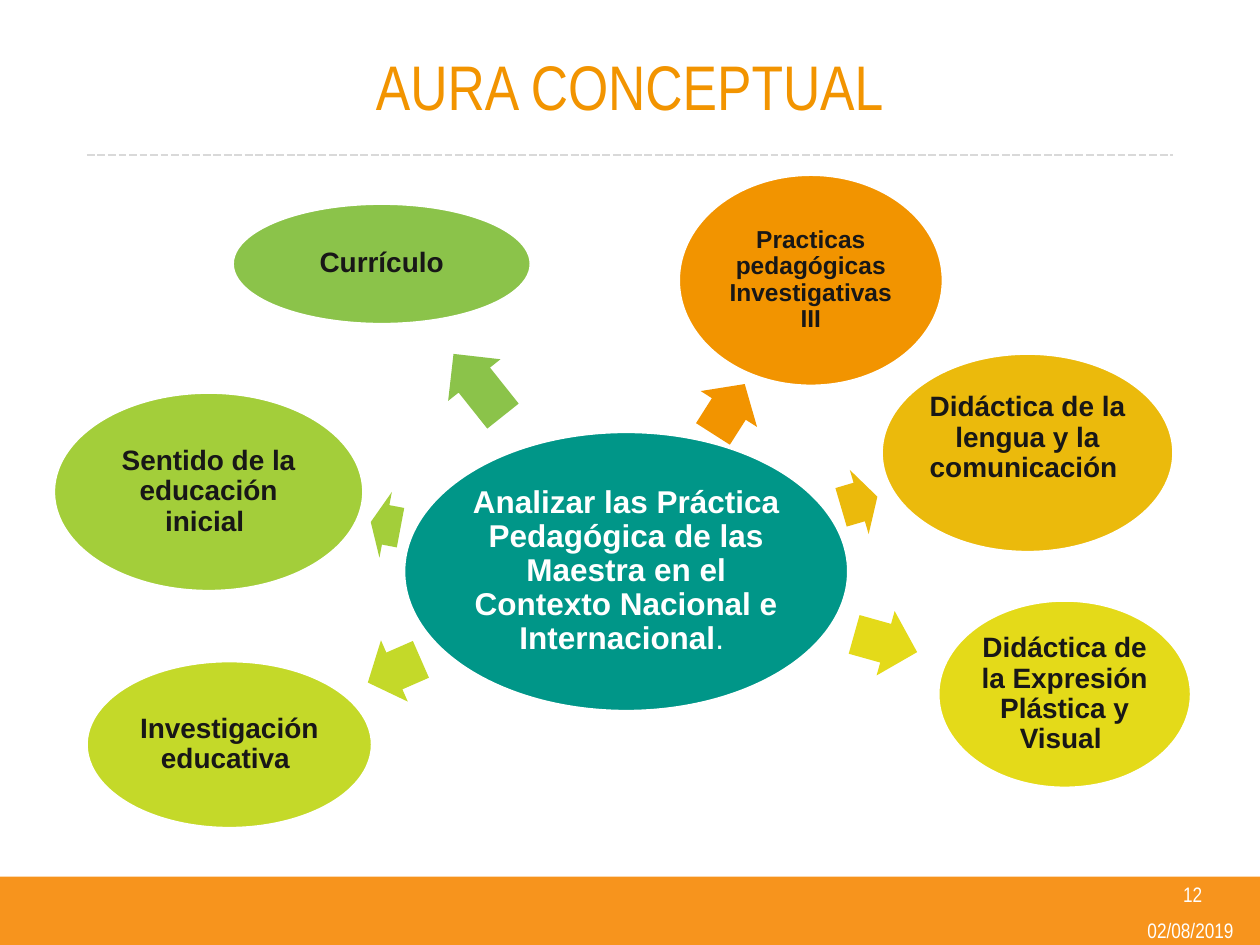
from lxml import etree
from pptx import Presentation
from pptx.dml.color import RGBColor
from pptx.enum import dml, shapes, text
from pptx.util import Pt


def color(hex_value):
    return RGBColor.from_string(hex_value)


def write(shape, runs, size, font, hex_value, inset, spacing=1.0):
    frame = shape.text_frame
    frame.word_wrap = True
    frame.vertical_anchor = text.MSO_ANCHOR.MIDDLE
    frame.margin_left = frame.margin_right = Pt(inset)
    frame.margin_top = frame.margin_bottom = Pt(inset)
    paragraph = frame.paragraphs[0]
    paragraph.alignment = text.PP_ALIGN.CENTER
    paragraph.line_spacing = spacing
    for words, bold in runs:
        run = paragraph.add_run()
        run.text = words
        run.font.size = Pt(size)
        run.font.name = font
        run.font.bold = bold
        run.font.color.rgb = color(hex_value)


prs = Presentation()
prs.slide_width, prs.slide_height = Pt(720), Pt(540)
slide = prs.slides.add_slide(prs.slide_layouts[6])
canvas = slide.shapes

footer = canvas.add_shape(shapes.MSO_SHAPE.RECTANGLE, Pt(0), Pt(501), Pt(720), Pt(39))
footer.shadow.inherit = False
footer.fill.solid()
footer.fill.fore_color.rgb = color("F7941D")
footer.line.fill.background()

divider = canvas.add_connector(shapes.MSO_CONNECTOR.STRAIGHT, Pt(49.7), Pt(88.6), Pt(670.3), Pt(88.6))
divider.line.color.rgb = color("D9D9D9")
divider.line.width = Pt(1.5)
divider.line.dash_style = dml.MSO_LINE.SQUARE_DOT
divider.line._ln.prstDash.set("val", "sysDash")
etree.SubElement(divider._element.spPr, "{http://schemas.openxmlformats.org/drawingml/2006/main}effectLst")

labels = [
    ("02/08/2019", 642.2, 524.2, 76.3, 15.1, 12, "FFFFFF"),
    ("12", 643.7, 500.4, 75.6, 21.6, 12, "FFFFFF"),
    ("AURA CONCEPTUAL", 49.7, 10.1, 620.6, 77, 36, "F29400"),
]
for words, left, top, width, height, size, hue in labels:
    label = canvas.add_textbox(Pt(left), Pt(top), Pt(width), Pt(height))
    write(label, [(words, False)], size, "Arial Narrow", hue, 3.6)

goal = [
    ("Analizar las Práctica Pedagógica de las Maestra en el Contexto Nacional e Internacional", True),
    (". ", False),
]
topics = [
    (goal, "009688", (231.1, 247, 253.4, 159.1), None, 18),
    ([("Practicas pedagógicas Investigativas III", True)], "F29400",
     (388.1, 100.1, 150.5, 120.2), (399.6, 214.6, 33.8, 302.5), 14),
    ([("Didáctica de la lengua y la comunicación ", True)], "EBBA0C",
     (504, 202.3, 166.3, 113), (480.2, 267.8, 21.6, 343.6), 16),
    ([("Didáctica de la Expresión Plástica y Visual ", True)], "E4DA19",
     (536.4, 343.4, 144, 106.6), (487.4, 348.5, 37.4, 15.7), 16),
    ([("Investigación educativa ", True)], "C4D929",
     (49.7, 378, 162.7, 95), (208.8, 364.3, 33.1, 156.4), 16),
    ([("Sentido de la educación inicial ", True)], "A3CE3A",
     (31, 224.6, 176.4, 113), (211.7, 280.8, 17.3, 190.7), 16),
    ([("Currículo", True)], "8BC34A",
     (133.2, 116.6, 169.9, 68.4), (250.6, 200.9, 45.4, 231.5), 16),
]
for runs, hue, bounds, pointer, size in topics:
    if pointer:
        left, top, length, angle = pointer
        arrow = canvas.add_shape(shapes.MSO_SHAPE.RIGHT_ARROW, Pt(left), Pt(top), Pt(length), Pt(38.2))
        arrow.adjustments[0] = 0.6
        arrow.adjustments[1] = 0.5
        arrow.rotation = angle
        arrow.shadow.inherit = False
        arrow.fill.solid()
        arrow.fill.fore_color.rgb = color(hue)
        arrow.line.fill.background()
    bubble = canvas.add_shape(shapes.MSO_SHAPE.OVAL, *[Pt(length) for length in bounds])
    bubble.shadow.inherit = False
    bubble.fill.solid()
    bubble.fill.fore_color.rgb = color(hue)
    bubble.line.color.rgb = color("FFFFFF")
    bubble.line.width = Pt(1)
    write(bubble, runs, size, "Arial", "181717" if pointer else "FFFFFF", 1.5 if pointer else 2, 0.9)
    if hue == "EBBA0C":
        bubble.text_frame.margin_bottom = Pt(18.5)

prs.save("out.pptx")
